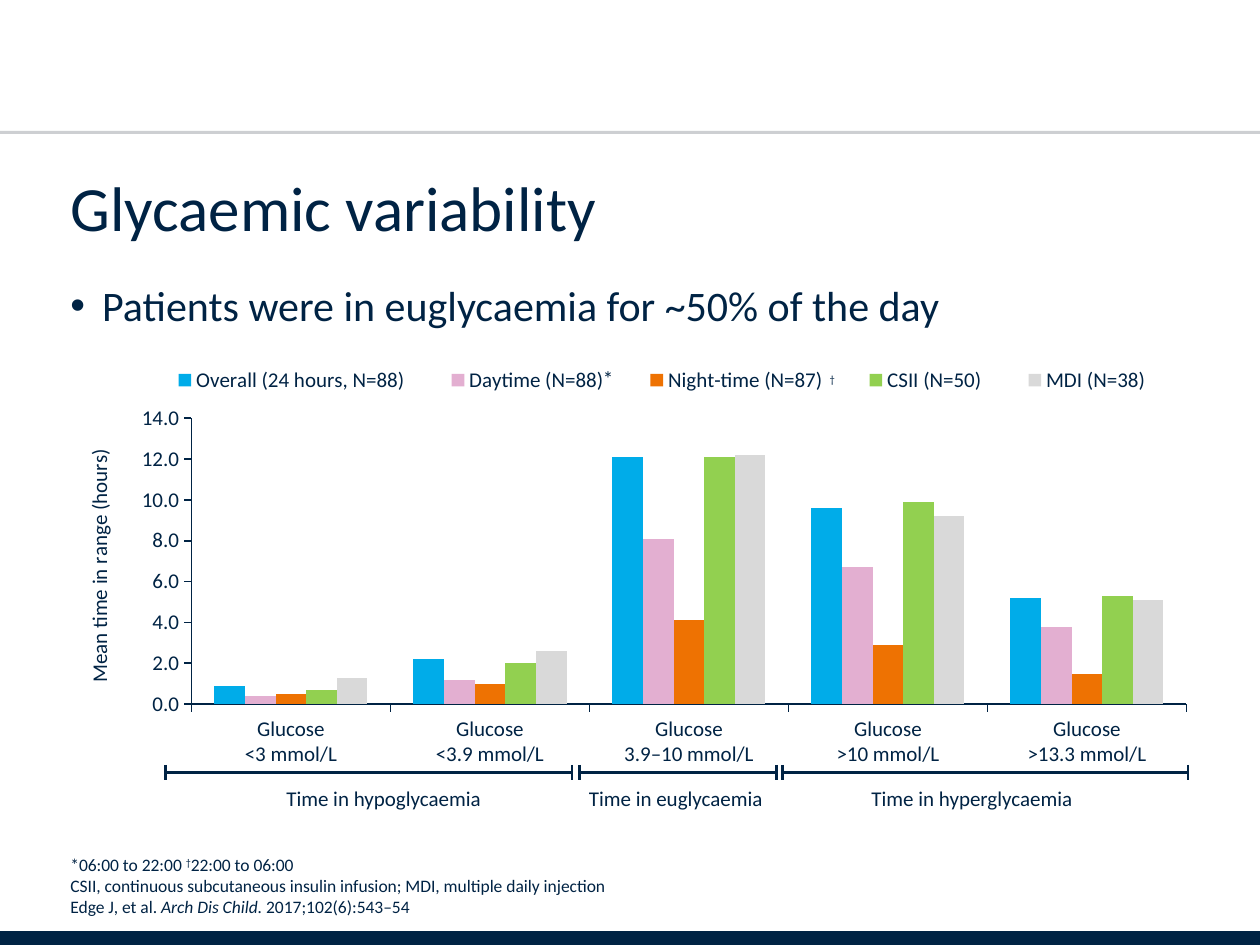
from lxml import etree
from pptx import Presentation
from pptx.chart.data import CategoryChartData
from pptx.dml.color import RGBColor
from pptx.enum.chart import XL_CHART_TYPE, XL_LEGEND_POSITION, XL_TICK_MARK
from pptx.enum.shapes import MSO_CONNECTOR
from pptx.enum.text import MSO_ANCHOR, PP_ALIGN
from pptx.oxml.ns import qn
from pptx.util import Cm, Pt

NAVY = RGBColor(0x00, 0x23, 0x44)
GREY = RGBColor(0x9D, 0xA1, 0xA6)
BLUE = RGBColor(0x00, 0xAC, 0xE9)
PINK = RGBColor(0xE3, 0xAF, 0xD1)
ORANGE = RGBColor(0xEE, 0x72, 0x02)
GREEN = RGBColor(0x92, 0xD0, 0x50)
SILVER = RGBColor(0xD9, 0xD9, 0xD9)
COLUMN = XL_CHART_TYPE.COLUMN_CLUSTERED
TOP = XL_LEGEND_POSITION.TOP
OUT, NONE = XL_TICK_MARK.OUTSIDE, XL_TICK_MARK.NONE
STRAIGHT = MSO_CONNECTOR.STRAIGHT
LEFT, CENTER = PP_ALIGN.LEFT, PP_ALIGN.CENTER
UPPER, LOWER = MSO_ANCHOR.TOP, MSO_ANCHOR.BOTTOM

EDGE, WIDTH = 1.17, 23.19
BANDS = ["<3", "<3.9", "3.9–10", ">10", ">13.3"]
SERIES = [
    ("Overall (24 hours, N=88)", BLUE, (0.9, 2.2, 12.1, 9.6, 5.2)),
    ("Daytime (N=88)", PINK, (0.4, 1.2, 8.1, 6.7, 3.8)),
    ("Night-time (N=87)", ORANGE, (0.5, 1, 4.1, 2.9, 1.5)),
    ("CSII (N=50)", GREEN, (0.7, 2, 12.1, 9.9, 5.3)),
    ("MDI (N=38)", SILVER, (1.3, 2.6, 12.2, 9.2, 5.1)),
]
SPANS = [
    ("Time in hypoglycaemia", 4.8, 3.33, 11.53),
    ("Time in euglycaemia", 10.69, 11.68, 15.65),
    ("Time in hyperglycaemia", 16.66, 15.77, 23.95),
]
NOTES = [
    [("*06:00 to 22:00 ", ""), ("†", "super"), ("22:00 to 06:00", "")],
    [("CSII, continuous subcutaneous insulin infusion; MDI, multiple daily injection", "")],
    [("Edge J, et al. ", ""), ("Arch Dis Child.", "italic"), (" 2017;102(6):543–54", "")],
]


class Deck:
    """Hold the style and the current slide, and draw each kind of element."""

    def __init__(self, face="Calibri", ink=NAVY):
        self.face, self.ink = face, ink
        self.show = Presentation()
        self.show.slide_width, self.show.slide_height = Cm(25.4), Cm(19.05)
        self.slide = self.show.slides.add_slide(self.show.slide_layouts[5])

    def font(self, font, size):
        font.name, font.size = self.face, Pt(size)
        font.color.rgb = self.ink

    def fill(self, frame, lines, size, align):
        para = frame.paragraphs[0]
        para.alignment = align
        for row, runs in enumerate(lines):
            if row:
                para.add_line_break()
            for words, mark in runs:
                run = para.add_run()
                run.text = words
                self.font(run.font, size)
                if mark == "italic":
                    run.font.italic = True
                if mark == "super":
                    run._r.get_or_add_rPr().set("baseline", "30000")
        return para

    def title(self, words, x, y, w, h, size):
        box = self.slide.shapes.title
        box.left, box.top, box.width, box.height = Cm(x), Cm(y), Cm(w), Cm(h)
        box.text_frame.vertical_anchor = LOWER
        para = self.fill(box.text_frame, [[(words, "")]], size, LEFT)
        para.line_spacing = 0.9

    def text(self, lines, x, y, w, h, size, align=CENTER, anchor=UPPER, wrap=True):
        box = self.slide.shapes.add_textbox(Cm(x), Cm(y), Cm(w), Cm(h))
        box.text_frame.word_wrap = wrap
        box.text_frame.vertical_anchor = anchor
        return self.fill(box.text_frame, lines, size, align)

    def bullet(self, words, x, y, w, h, size):
        para = self.text([[(words, "")]], x, y, w, h, size, LEFT)
        props = para._p.get_or_add_pPr()
        indent = Cm(0.64)
        props.set("marL", str(indent))
        props.set("indent", str(-indent))
        etree.SubElement(props, qn("a:buFont")).set("typeface", "Arial")
        etree.SubElement(props, qn("a:buChar")).set("char", "•")
        para.space_after = Pt(6)

    def line(self, x1, y1, x2, y2, color, width, alpha=None, home=None):
        shapes = (home or self.slide).shapes
        rule = shapes.add_connector(STRAIGHT, Cm(x1), Cm(y1), Cm(x2), Cm(y2))
        rule.line.color.rgb, rule.line.width = color, Pt(width)
        props = rule._element.spPr
        if alpha:
            tint = props.find(".//" + qn("a:srgbClr"))
            etree.SubElement(tint, qn("a:alpha")).set("val", str(alpha * 1000))
        etree.SubElement(props, qn("a:effectLst"))

    def range(self, x1, x2, y, tick=0.15):
        group = self.slide.shapes.add_group_shape()
        self.line(x1, y, x2, y, self.ink, 1.5, home=group)
        for x in (x1, x2):
            self.line(x, y - tick, x, y + tick, self.ink, 1.5, home=group)

    def place(self, x, y, w=None, h=None, inner=False):
        layout = etree.Element(qn("c:layout"))
        manual = etree.SubElement(layout, qn("c:manualLayout"))
        pairs = [("layoutTarget", "inner")] if inner else []
        pairs += [("xMode", "edge"), ("yMode", "edge"), ("x", x), ("y", y)]
        if w:
            pairs += [("w", w), ("h", h)]
        for tag, val in pairs:
            etree.SubElement(manual, qn("c:" + tag)).set("val", str(val))
        return layout

    def chart(self, cats, rows, x, y, w, h, size):
        data = CategoryChartData(number_format="0.0")
        data.categories = cats
        for name, _, vals in rows:
            data.add_series(name, vals)
        frame = self.slide.shapes.add_chart(COLUMN, Cm(x), Cm(y), Cm(w), Cm(h), data)
        chart = frame.chart
        self.font(chart.font, size)
        chart.has_title = False
        plot = chart.plots[0]
        plot.gap_width, plot.overlap, plot.vary_by_categories = 150, 0, False
        for series, (_, color, _) in zip(plot.series, rows):
            series.format.fill.solid()
            series.format.fill.fore_color.rgb = color
        for axis in (chart.category_axis, chart.value_axis):
            axis.has_major_gridlines = False
            axis.major_tick_mark, axis.minor_tick_mark = OUT, NONE
            axis.format.line.color.rgb = self.ink
            axis.format.line.width = Pt(1)
            self.font(axis.tick_labels.font, size)
        axis = chart.value_axis
        axis.minimum_scale, axis.maximum_scale, axis.major_unit = 0, 14, 2
        axis.tick_labels.number_format = "0.0"
        axis.tick_labels.number_format_is_linked = False
        head = axis.axis_title
        run = head.text_frame.paragraphs[0].add_run()
        run.text = "Mean time in range (hours)"
        self.font(run.font, size)
        run.font.bold = False
        body = head.text_frame._txBody.find(qn("a:bodyPr"))
        body.set("rot", "-5400000")
        body.set("vert", "horz")
        tree = head._element
        for old in tree.findall(qn("c:layout")):
            tree.remove(old)
        tree.find(qn("c:tx")).addnext(self.place(0.02, 0.22))
        chart.has_legend = True
        chart.legend.position, chart.legend.include_in_layout = TOP, False
        self.font(chart.legend.font, size)
        tree = chart.legend._element
        for old in tree.findall(qn("c:layout")):
            tree.remove(old)
        tree.find(qn("c:overlay")).addprevious(self.place(0.07, 0.02, 0.91, 0.09))
        area = chart._chartSpace.chart.plotArea
        for old in area.findall(qn("c:layout")):
            area.remove(old)
        area.insert(0, self.place(0.116, 0.155, 0.865, 0.678, True))


def main():
    deck = Deck()
    deck.line(0, 18.95, 25.4, 18.95, NAVY, 10)
    deck.line(0, 2.67, 25.4, 2.67, GREY, 1.75, alpha=50)
    deck.title("Glycaemic variability", EDGE, 3.18, WIDTH, 1.88, 36)
    deck.text(NOTES, EDGE, 17.86, WIDTH, 0.76, 10, LEFT, LOWER)
    deck.bullet("Patients were in euglycaemia for ~50% of the day", EDGE, 5.51, WIDTH, 1.5, 24)
    cats = [f"Glucose\n{band} mmol/L" for band in BANDS]
    deck.chart(cats, SERIES, EDGE, 7.11, WIDTH, 8.51, 12)
    deck.text([[("*", "")]], 11.89, 7.24, 0.74, 0.76, 12, wrap=False)
    deck.text([[("†", "super")]], 16.46, 7.34, 0.64, 0.56, 10.5, wrap=False)
    for words, x, start, end in SPANS:
        deck.text([[(words, "")]], x, 15.72, 5.87, 0.76, 12)
        deck.range(start, end, 15.57)
    deck.show.save("out.pptx")


if __name__ == "__main__":
    main()
